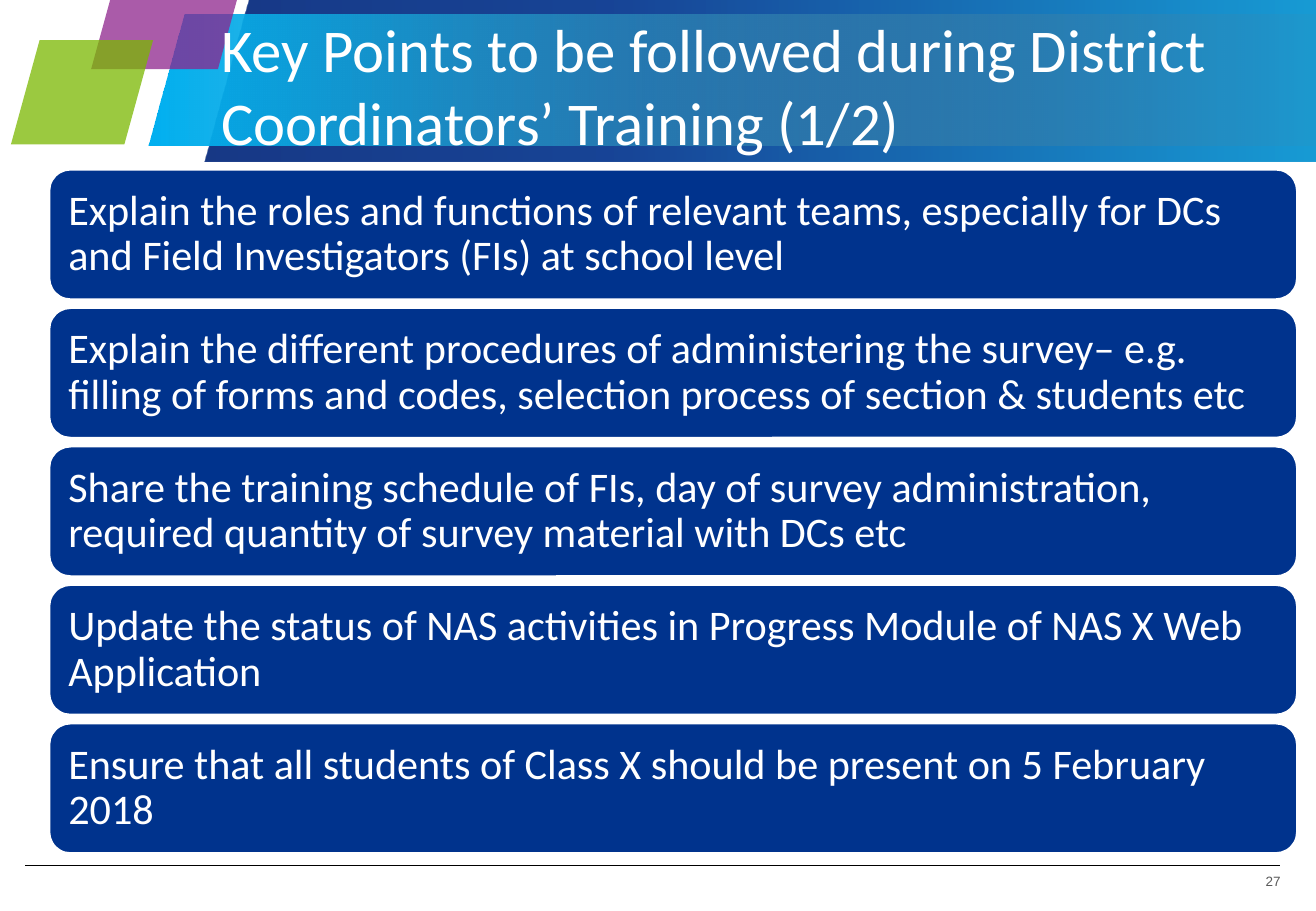
from lxml import etree
from pptx import Presentation
from pptx.dml.color import RGBColor
from pptx.enum.shapes import MSO_CONNECTOR, MSO_SHAPE
from pptx.enum.text import MSO_ANCHOR, MSO_AUTO_SIZE, PP_ALIGN
from pptx.oxml.ns import qn
from pptx.util import Pt

SLANT = MSO_SHAPE.PARALLELOGRAM
ROUND = MSO_SHAPE.ROUNDED_RECTANGLE
STRAIGHT = MSO_CONNECTOR.STRAIGHT
MIDDLE, TOP = MSO_ANCHOR.MIDDLE, MSO_ANCHOR.TOP
LEFT, RIGHT = PP_ALIGN.LEFT, PP_ALIGN.RIGHT
FIXED = MSO_AUTO_SIZE.NONE
PX = 9144

THEME = {
    "navy": "00338D", "white": "FFFFFF", "grey": "595959", "rule": "000000",
    "head": "Calibri", "small": "Arial",
    "title": 36, "body": 25, "page": 8,
}


def paint(shape, stops):
    props = shape._element.spPr
    if len(stops) > 1:
        fill = etree.SubElement(props, qn("a:gradFill"), rotWithShape="1")
        group = etree.SubElement(fill, qn("a:gsLst"))
        etree.SubElement(fill, qn("a:lin"), ang="0", scaled="0")
    else:
        fill = etree.SubElement(props, qn("a:solidFill"))
    for place, color, alpha in stops:
        host = fill
        if len(stops) > 1:
            host = etree.SubElement(group, qn("a:gs"), pos=str(place * 1000))
        tint = etree.SubElement(host, qn("a:srgbClr"), val=color)
        etree.SubElement(tint, qn("a:alpha"), val=str(alpha * 1000))


def write(shape, text, face, size, color, align, anchor, pads, lead=1.0):
    frame = shape.text_frame
    sides = ("margin_left", "margin_top", "margin_right", "margin_bottom")
    look = dict(zip(sides, [pad * PX for pad in pads]))
    look.update(word_wrap=True, auto_size=FIXED, vertical_anchor=anchor)
    for name, value in look.items():
        setattr(frame, name, value)
    para = frame.paragraphs[0]
    para.text = text
    for name, value in {"alignment": align, "line_spacing": lead, "space_before": Pt(0)}.items():
        setattr(para, name, value)
    for name, value in {"name": THEME[face], "size": Pt(THEME[size])}.items():
        setattr(para.runs[0].font, name, value)
    para.runs[0].font.color.rgb = RGBColor.from_string(THEME[color])


deck = Presentation()
deck.slide_width, deck.slide_height = 1083 * PX, 750 * PX
slide = deck.slides.add_slide(deck.slide_layouts[5])
shapes = slide.shapes

slants = [
    ((168, -1, 998, 134), [(0, "00257A", 90), (35, "00338D", 90), (100, "009FDA", 90)]),
    ((122, 12, 1020, 108), [(0, "00B0F0", 100), (100, "7A7A7A", 0)]),
    ((75, -58, 136, 115), [(0, "8E258D", 75)]),
    ((9, 33, 117, 86), [(0, "7AB800", 75)]),
]
for box, stops in slants:
    slant = shapes.add_shape(SLANT, *[n * PX for n in box])
    slant.adjustments[0] = 0.275
    slant.shadow.inherit = False
    paint(slant, stops)
    slant.line.fill.background()

rule = shapes.add_connector(STRAIGHT, 21 * PX, 712 * PX, 1053 * PX, 712 * PX)
rule.line.color.rgb = RGBColor.from_string(THEME["rule"])
rule.line.width = Pt(0.25)
etree.SubElement(rule._element.spPr, qn("a:effectLst"))

page = shapes.add_textbox(994 * PX, 711 * PX, 60 * PX, 31 * PX)
write(page, "27", "small", "page", "grey", RIGHT, TOP, (8, 8, 0, 0))

points = [
    "Explain the roles and functions of relevant teams, especially for DCs and Field Investigators (FIs) at school level",
    "Explain the different procedures of administering the survey– e.g. filling of forms and codes, selection process of section & students etc",
    "Share the training schedule of FIs, day of survey administration, required quantity of survey material with DCs etc",
    "Update the status of NAS activities in Progress Module of NAS X Web Application",
    "Ensure that all students of Class X should be present on 5 February 2018",
]
for row, point in enumerate(points):
    card = shapes.add_shape(ROUND, 40 * PX, (139 + 114 * row) * PX, 1028 * PX, 108 * PX)
    card.shadow.inherit = False
    card.fill.solid()
    card.fill.fore_color.rgb = RGBColor.from_string(THEME["navy"])
    card.line.color.rgb = RGBColor.from_string(THEME["white"])
    card.line.width = Pt(2)
    write(card, point, "head", "body", "white", LEFT, MIDDLE, (11, 10, 9, 10), 0.9)

title = shapes.title
for name, value in {"left": 172, "top": 1, "width": 975, "height": 137}.items():
    setattr(title, name, value * PX)
write(title, "Key Points to be followed during District Coordinators’ Training (1/2)",
      "head", "title", "white", LEFT, MIDDLE, (10, 5, 10, 5))
shapes._spTree.append(title._element)

deck.save("out.pptx")
